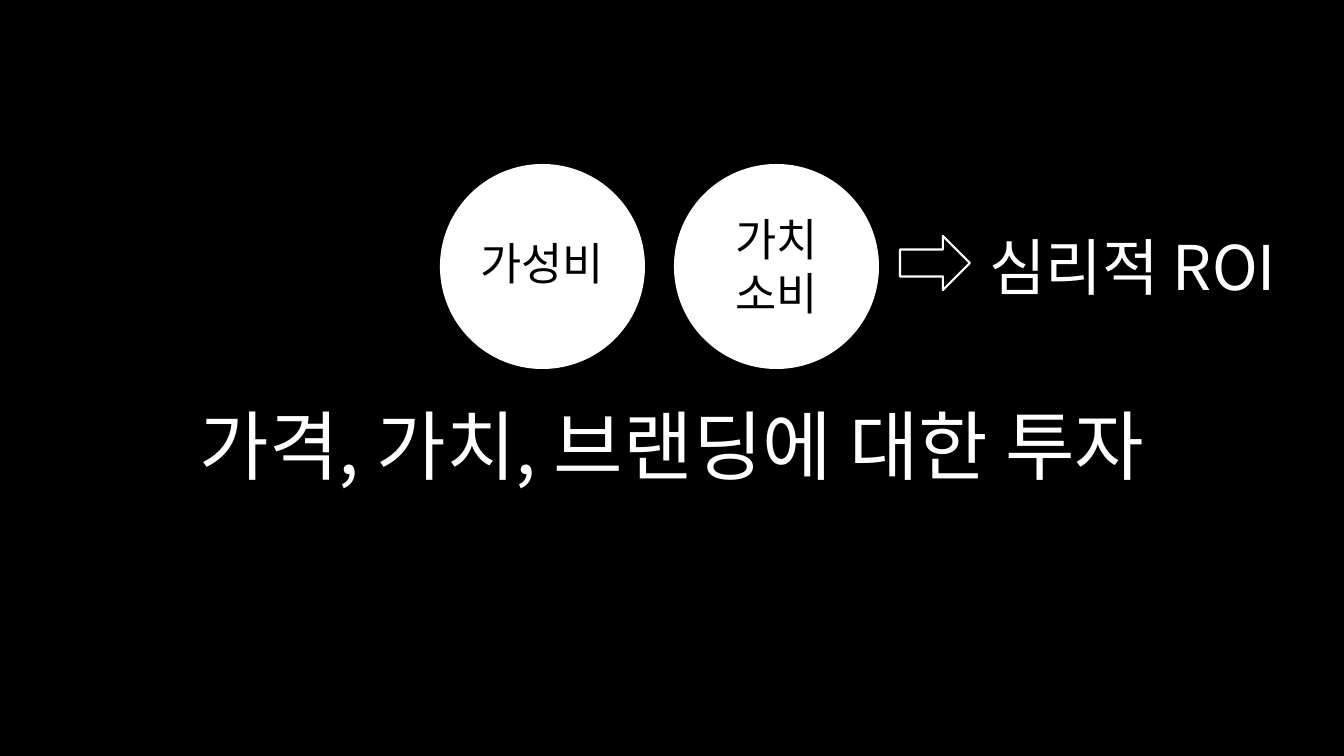
from pptx import Presentation
from pptx.dml.color import RGBColor
from pptx.enum.shapes import MSO_SHAPE
from pptx.enum.text import MSO_AUTO_SIZE, PP_ALIGN
from pptx.util import Pt
from lxml import etree

OVAL = MSO_SHAPE.OVAL
RIGHT_ARROW = MSO_SHAPE.RIGHT_ARROW
GROW = MSO_AUTO_SIZE.SHAPE_TO_FIT_TEXT
CENTER = PP_ALIGN.CENTER

WIDTH, HEIGHT = 1344, 756
SCALE = 12192000 / WIDTH
FONT = "Noto Sans CJK KR"
COLORS = {"black": "000000", "white": "FFFFFF"}
DRAWING_NS = "http://schemas.openxmlformats.org/drawingml/2006/main"


def emu(*lengths):
    """Turn px lengths into EMU."""
    return [round(length * SCALE) for length in lengths]


def add_label(shapes, text, box, size, color):
    """Add a centred text box with one font for Latin and Korean letters."""
    frame = shapes.add_textbox(*emu(*box)).text_frame
    frame.word_wrap = True
    frame.auto_size = GROW
    paragraph = frame.paragraphs[0]
    paragraph.text = text
    paragraph.alignment = CENTER
    for run in paragraph.runs:
        run.font.size = Pt(size)
        run.font.name = FONT
        run.font.color.rgb = RGBColor.from_string(COLORS[color])
        east_asian = etree.SubElement(run.font._element, f"{{{DRAWING_NS}}}ea")
        east_asian.set("typeface", FONT)


presentation = Presentation()
presentation.slide_width, presentation.slide_height = emu(WIDTH, HEIGHT)
slide = presentation.slides.add_slide(presentation.slide_layouts[6])
backdrop = slide.background.fill
backdrop.solid()
backdrop.fore_color.rgb = RGBColor.from_string(COLORS["black"])

# Two kinds of spending, each a circle with its label
CIRCLE_LEFT, CIRCLE_TOP, DIAMETER, PITCH = 440, 164, 205, 234
concepts = [("가성비", 231, 65), ("가치\v소비", 207, 119)]
for index, (concept, label_top, label_height) in enumerate(concepts):
    left = CIRCLE_LEFT + index * PITCH
    group = slide.shapes.add_group_shape()
    circle = group.shapes.add_shape(OVAL, *emu(left, CIRCLE_TOP, DIAMETER, DIAMETER))
    circle.shadow.inherit = False
    circle.fill.solid()
    circle.fill.fore_color.rgb = RGBColor.from_string(COLORS["white"])
    circle.line.fill.background()
    add_label(group.shapes, concept, (left, label_top, DIAMETER, label_height), 32, "black")

# Arrow to the outcome
arrow = slide.shapes.add_shape(RIGHT_ARROW, *emu(900, 236, 70, 54))
arrow.shadow.inherit = False
arrow.fill.background()
arrow.line.color.rgb = RGBColor.from_string(COLORS["white"])
arrow.line.width = Pt(1.5)

add_label(slide.shapes, "심리적 ROI", (921, 224, 423, 85), 44, "white")
add_label(slide.shapes, "가격, 가치, 브랜딩에 대한 투자", (0, 394, WIDTH, 102), 54, "white")

presentation.save("out.pptx")
